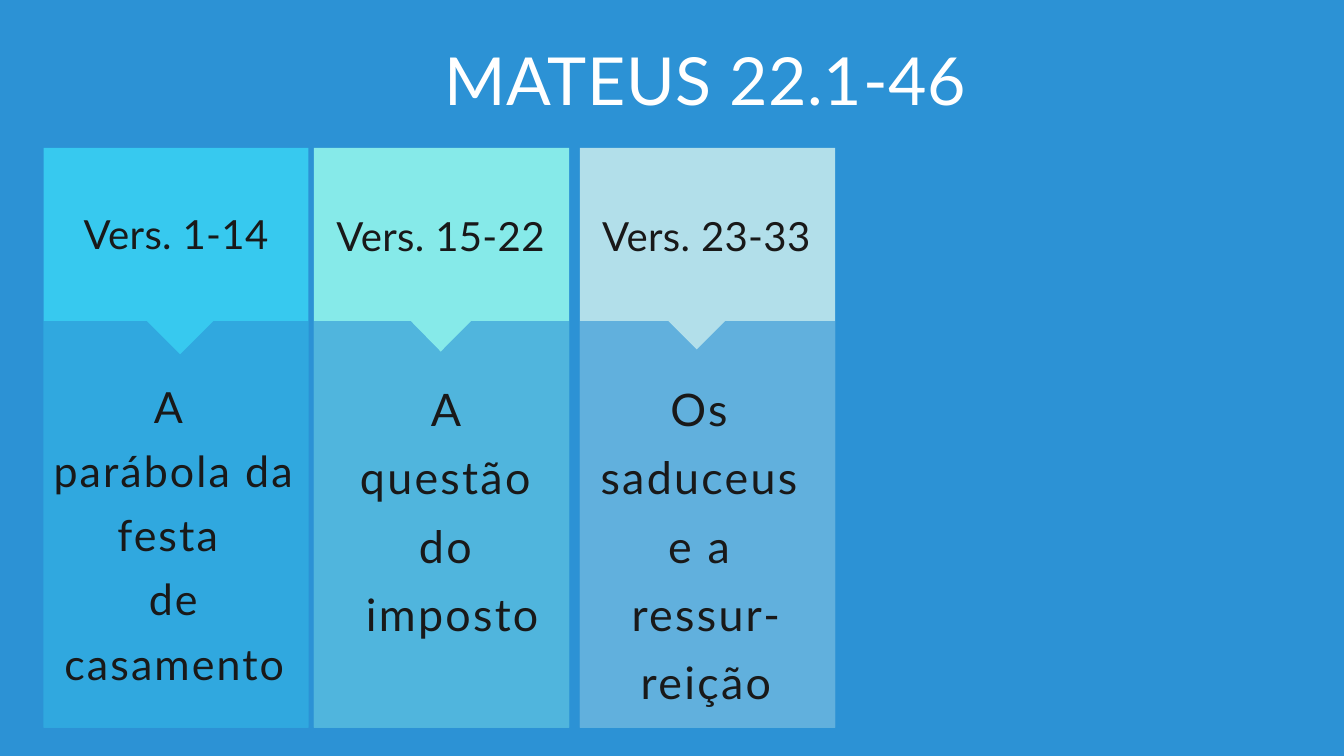
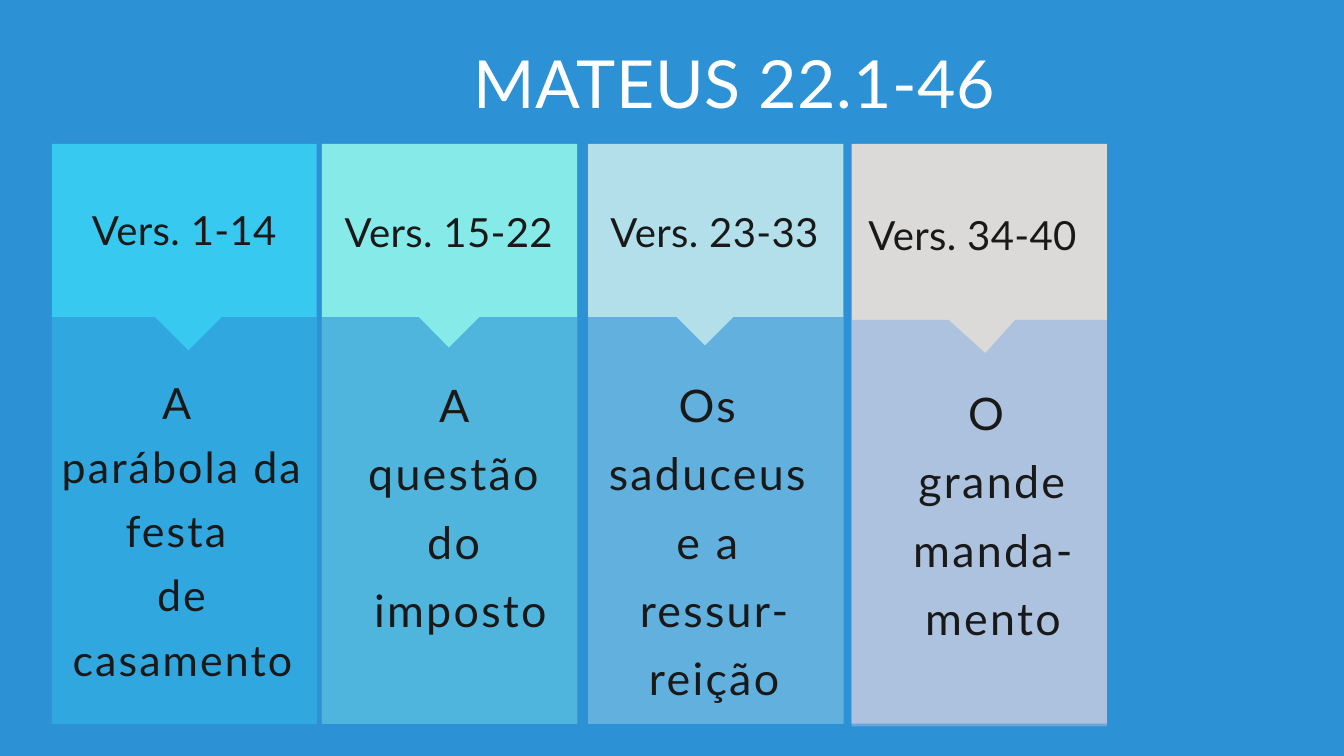
"""Builds two slides that lay out Matthew 22 in verse columns."""
from lxml.etree import SubElement
from pptx import Presentation
from pptx.dml.color import RGBColor
from pptx.enum.shapes import MSO_SHAPE as Preset
from pptx.enum.text import MSO_ANCHOR as Anchor, MSO_AUTO_SIZE as AutoSize, PP_ALIGN as Align
from pptx.oxml.ns import qn
from pptx.util import Cm, Pt

BLUE = RGBColor(0x2C, 0x92, 0xD5)
PERIWINKLE = RGBColor(0x8F, 0xB2, 0xE2)
CYAN = RGBColor(0x37, 0xC9, 0xEF)
AQUA = RGBColor(0x86, 0xEA, 0xE9)
PALE_BLUE = RGBColor(0xB2, 0xDF, 0xEA)
GREY = RGBColor(0xDB, 0xDA, 0xD9)
INK = RGBColor(0x19, 0x19, 0x19)
WHITE = RGBColor(0xFF, 0xFF, 0xFF)

FONT = "Lato"
TITLE = "MATEUS 22.1-46"
TITLE_STYLE = dict(size=71, color=WHITE, spacing=0.7, leading=94.3)
VERSE_STYLE = dict(size=43, color=INK, spacing=0.4, leading=56)
TOPIC_STYLE = dict(size=48, color=INK, spacing=2.5, leading=73.3)
SMALL_TOPIC_STYLE = dict(size=46, color=INK, spacing=2.3, leading=68.8)

CARD_HEIGHT, BAND_HEIGHT = 21.92, 15.37
COLUMNS = [
    dict(left=0, width=10.01, color=CYAN, band_color=BLUE, band_top=6.55,
         arrow=[(6.91, 6.05), (5.16, 7.8), (3.51, 6.15)],
         verses="Vers. 1-14", verses_box=(0.36, 2.17, 9.3, 2),
         topic=["A ", "parábola da festa ", "de casamento"],
         topic_box=(0, 8.31, 9.88, 12.29), topic_style=SMALL_TOPIC_STYLE),
    dict(left=10.21, width=9.65, color=AQUA, band_color=BLUE, band_top=6.55,
         arrow=[(6.83, 5.66), (4.8, 7.7), (3.25, 6.12)],
         verses="Vers. 15-22", verses_box=(0.17, 2.25, 9.25, 2),
         topic=["A ", "questão ", "do ", "imposto"],
         topic_box=(0.17, 8.28, 10.13, 10.41), topic_style=TOPIC_STYLE),
    dict(left=20.27, width=9.65, color=PALE_BLUE, band_color=BLUE, band_top=6.55,
         arrow=[(6.3, 5.74), (4.42, 7.62), (2.92, 6.12)],
         verses="Vers. 23-33", verses_box=(0.08, 2.25, 9.4, 2),
         topic=["Os ", "saduceus ", "e a ", "ressur-", "reição"],
         topic_box=(-0.3, 8.28, 10.13, 13), topic_style=TOPIC_STYLE),
    dict(left=30.23, width=9.65, color=GREY, band_color=PERIWINKLE, band_top=6.65,
         arrow=[(6.83, 5.94), (5.05, 7.9), (3.48, 6.48)],
         verses="Vers. 34-40", verses_box=(-0.13, 2.36, 9.4, 2),
         topic=["O ", "grande manda-", "mento"],
         topic_box=(0.28, 8.59, 10.13, 10.41), topic_style=TOPIC_STYLE),
]
SLIDES = [
    dict(title_box=(14.17, 1.17, 24.99, 3.35), origin=(1.65, 5.59), columns=3),
    dict(title_box=(15.27, 1.27, 24.99, 3.35), origin=(1.96, 5.44), columns=4),
]


def write(shape, lines, size, color, spacing, leading):
    frame = shape.text_frame
    frame.margin_left = frame.margin_top = frame.margin_right = frame.margin_bottom = 0
    frame.word_wrap = True
    frame.auto_size = AutoSize.SHAPE_TO_FIT_TEXT
    frame.vertical_anchor = Anchor.TOP
    for index, line in enumerate(lines):
        paragraph = frame.add_paragraph() if index else frame.paragraphs[0]
        paragraph.alignment = Align.CENTER
        paragraph.line_spacing = Pt(leading)
        paragraph.space_before = Pt(0)
        run = paragraph.add_run()
        run.text = line
        run.font.name = FONT
        run.font.size = Pt(size)
        run.font.color.rgb = color
        run._r.get_or_add_rPr().set("spc", str(round(spacing * 100)))


def paint(shape, color, opacity=100):
    shape.shadow.inherit = False
    shape.line.fill.background()
    shape.fill.solid()
    shape.fill.fore_color.rgb = color
    if opacity < 100:
        fill_color = shape._element.spPr.find(qn("a:solidFill"))[0]
        SubElement(fill_color, qn("a:alpha"), val=str(opacity * 1000))


def add_block(slide, left, top, width, height, color, opacity=100):
    block = slide.shapes.add_shape(Preset.RECTANGLE, Cm(left), Cm(top), Cm(width), Cm(height))
    paint(block, color, opacity)


def add_text(slide, left, top, box, lines, style):
    x, y, width, height = box
    text_box = slide.shapes.add_textbox(Cm(left + x), Cm(top + y), Cm(width), Cm(height))
    write(text_box, lines, **style)


def add_column(slide, origin, column):
    left, top = origin[0] + column["left"], origin[1]
    width, color = column["width"], column["color"]
    add_block(slide, left, top, width, CARD_HEIGHT, color)
    add_block(slide, left, top + column["band_top"], width, BAND_HEIGHT, column["band_color"], 60)
    start, *others = [(Cm(left + x), Cm(top + y)) for x, y in column["arrow"]]
    builder = slide.shapes.build_freeform(*start)
    builder.add_line_segments(others, close=True)
    paint(builder.convert_to_shape(), color)
    add_text(slide, left, top, column["verses_box"], [column["verses"]], VERSE_STYLE)
    add_text(slide, left, top, column["topic_box"], column["topic"], column["topic_style"])


def main():
    presentation = Presentation()
    presentation.slide_width, presentation.slide_height = Cm(50.8), Cm(28.58)
    background = presentation.slide_master.background.fill
    background.solid()
    background.fore_color.rgb = BLUE
    for plan in SLIDES:
        slide = presentation.slides.add_slide(presentation.slide_layouts.get_by_name("Title Only"))
        title = slide.shapes.title
        title.left, title.top, title.width, title.height = map(Cm, plan["title_box"])
        write(title, [TITLE], **TITLE_STYLE)
        for column in COLUMNS[:plan["columns"]]:
            add_column(slide, plan["origin"], column)
    presentation.save("out.pptx")


if __name__ == "__main__":
    main()
